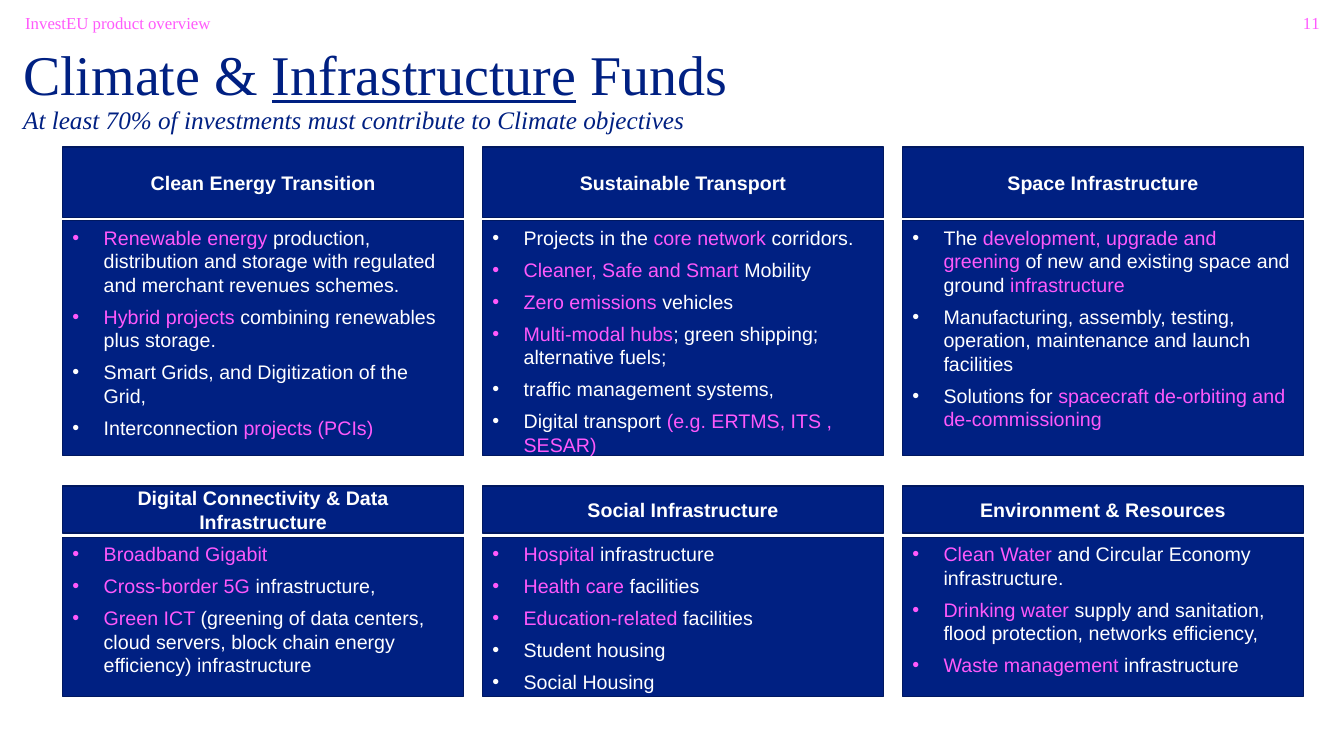
import copy

import pptx
import pptx.dml.color
import pptx.enum.shapes
import pptx.enum.text
import pptx.oxml
import pptx.oxml.ns
import pptx.util

Inches, Pt = pptx.util.Inches, pptx.util.Pt
ALIGN, ANCHOR = pptx.enum.text.PP_ALIGN, pptx.enum.text.MSO_ANCHOR
NAVY, EDGE, PINK, WHITE = "002082", "001860", "FE59FB", "FFFFFF"
SERIF = "Times New Roman"
LEFT, WIDTH, PITCH = 0.62, 3.98, 4.165

ROWS = [
    {"top": 1.46, "head": 0.7, "body_top": 2.19, "body": 2.33, "cards": [
        ("Clean Energy Transition", [
            "*Renewable energy *production, distribution and storage with regulated "
            "and merchant revenues schemes.",
            "*Hybrid projects *combining renewables plus storage.",
            "Smart Grids, and Digitization of the Grid,",
            "Interconnection *projects (PCIs)*"]),
        ("Sustainable Transport", [
            "Projects in the *core network *corridors.",
            "*Cleaner, Safe and Smart *Mobility",
            "*Zero emissions *vehicles",
            "*Multi-modal hubs*; green shipping; alternative fuels;",
            "traffic management systems,",
            "Digital transport *(e.g. ERTMS, ITS , SESAR)*"]),
        ("Space Infrastructure", [
            "The *development, upgrade and greening* of new and existing space "
            "and ground *infrastructure*",
            "Manufacturing, assembly, testing, operation, maintenance and launch facilities",
            "Solutions for *spacecraft de-orbiting and de-commissioning*"])]},
    {"top": 4.82, "head": 0.47, "body_top": 5.33, "body": 1.58, "cards": [
        ("Digital Connectivity & Data Infrastructure", [
            "*Broadband Gigabit*",
            "*Cross-border 5G *infrastructure,",
            "*Green ICT *(greening of data centers, cloud servers, block chain energy "
            "efficiency) infrastructure"]),
        ("Social Infrastructure", [
            "*Hospital* infrastructure",
            "*Health care* facilities",
            "*Education-related* facilities",
            "Student housing",
            "Social Housing"]),
        ("Environment & Resources", [
            "*Clean Water *and Circular Economy infrastructure.",
            "*Drinking water *supply and sanitation, flood protection, networks efficiency,",
            "*Waste management *infrastructure"])]},
]


def rgb(value):
    """Turn a hex string into a colour."""
    return pptx.dml.color.RGBColor.from_string(value)


def add_run(p, text, font="Arial", size=14, color=WHITE, bold=False, italic=False,
            underline=False, spacing=0):
    """Append a formatted run to a paragraph."""
    r = p.add_run()
    r.text = text
    r.font.name, r.font.size = font, Pt(size)
    r.font.bold, r.font.italic, r.font.underline = bold, italic, underline
    r.font.color.rgb = rgb(color)
    if spacing:
        r.font._element.set("spc", str(int(spacing * 100)))
    return r


def add_bullet(p, indent=0.31):
    """Give a paragraph a hanging round bullet."""
    pPr = p._p.get_or_add_pPr()
    pPr.set("marL", str(Inches(indent)))
    pPr.set("indent", str(-Inches(indent)))
    for tag, key, value in (("buFont", "typeface", "Arial"), ("buChar", "char", "•")):
        bullet = pptx.oxml.parse_xml(f'<a:{tag} {pptx.oxml.ns.nsdecls("a")}/>')
        bullet.set(key, value)
        pPr.append(bullet)


def add_panel(s, x, y, w, h, anchor):
    """Draw a navy rectangle and return its text frame."""
    sp = s.shapes.add_shape(pptx.enum.shapes.MSO_SHAPE.RECTANGLE,
                            Inches(x), Inches(y), Inches(w), Inches(h))
    sp.shadow.inherit = False
    sp.fill.solid()
    sp.fill.fore_color.rgb = rgb(NAVY)
    sp.line.color.rgb = rgb(EDGE)
    sp.line.width = Pt(1)
    tf = sp.text_frame
    tf.word_wrap = True
    tf.vertical_anchor = anchor
    return tf


def add_card(s, x, row, heading, items):
    """Place a heading panel with its bulleted panel below."""
    tf = add_panel(s, x, row["top"], WIDTH, row["head"], ANCHOR.MIDDLE)
    p = tf.paragraphs[0]
    p.alignment, p.space_after = ALIGN.CENTER, Pt(6)
    add_run(p, heading, bold=True)

    tf = add_panel(s, x, row["body_top"], WIDTH, row["body"], ANCHOR.TOP)
    for i, item in enumerate(items):
        p = tf.add_paragraph() if i else tf.paragraphs[0]
        p.alignment, p.space_after = ALIGN.LEFT, Pt(6)
        add_bullet(p)
        for j, part in enumerate(item.split("*")):
            if part:
                add_run(p, part, color=PINK if j % 2 else WHITE)


def add_title(s, x, y, w, h):
    """Fill the title placeholder with the title and its subtitle."""
    sp = s.shapes.title
    sp.left, sp.top, sp.width, sp.height = Inches(x), Inches(y), Inches(w), Inches(h)
    tf = sp.text_frame
    tf.word_wrap = True
    tf.auto_size = pptx.enum.text.MSO_AUTO_SIZE.NONE
    tf.vertical_anchor = ANCHOR.TOP
    p = tf.paragraphs[0]
    p.alignment, p.line_spacing = ALIGN.LEFT, 0.9
    big = {"font": SERIF, "size": 40, "color": NAVY}
    add_run(p, "Climate & ", **big)
    add_run(p, "Infrastructure", underline=True, **big)
    r = add_run(p, " Funds", **big)
    p.add_line_break()
    p._p[-1].append(copy.deepcopy(r.font._element))
    add_run(p, "At least 70% of investments must contribute to Climate objectives",
            font=SERIF, size=18, color=NAVY, italic=True)


def add_label(s, x, y, w, h, text, align, **fmt):
    """Place a small pink label at the top of the slide."""
    tf = s.shapes.add_textbox(Inches(x), Inches(y), Inches(w), Inches(h)).text_frame
    tf.word_wrap = True
    tf.margin_left = tf.margin_right = tf.margin_top = tf.margin_bottom = 0
    p = tf.paragraphs[0]
    p.alignment = align
    add_run(p, text, font=SERIF, size=12, **fmt)


def main():
    """Build and save the slide."""
    prs = pptx.Presentation()
    prs.slide_width, prs.slide_height = Inches(13.33), Inches(7.5)
    s = prs.slides.add_slide(prs.slide_layouts[5])
    add_title(s, 0.13, 0.42, 13, 0.66)
    add_label(s, 0.25, 0.13, 7.6, 0.22, "InvestEU product overview", ALIGN.LEFT,
              color="FF5AFB")
    add_label(s, 12.63, 0.13, 0.46, 0.22, "11", ALIGN.RIGHT, color="FF59FF", spacing=0.5)
    for row in ROWS:
        for i, (heading, items) in enumerate(row["cards"]):
            add_card(s, LEFT + i * PITCH, row, heading, items)
    prs.save("out.pptx")


if __name__ == "__main__":
    main()
